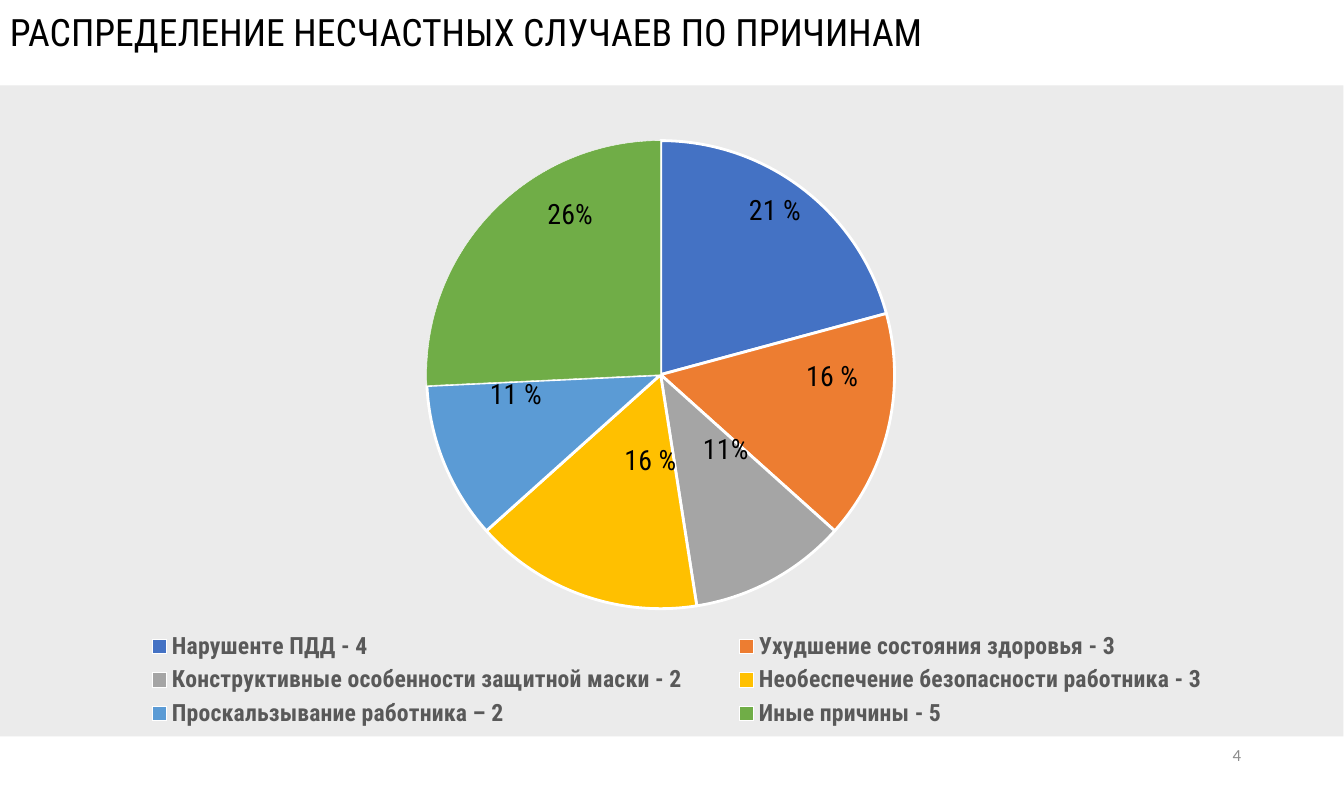
import math

import lxml.etree
import pptx
import pptx.chart.data
import pptx.dml.color
import pptx.enum.chart
import pptx.enum.shapes
import pptx.enum.text
import pptx.util
from pptx.oxml.ns import qn

WIDTH_CM, HEIGHT_CM = 34, 20
HEADING = "РАСПРЕДЕЛЕНИЕ НЕСЧАСТНЫХ СЛУЧАЕВ ПО ПРИЧИНАМ"
PAGE_NUMBER = "4"
HEADING_FONT, PAGE_FONT = "Roboto Condensed", "Calibri"

CAUSES = [
    ("Нарушенте ПДД - 4", 21, "4472C4", "21 %", (7.72, 2.1)),
    ("Ухудшение состояния здоровья - 3", 16, "ED7D31", "16 %", (8.29, 3.75)),
    ("Конструктивные особенности защитной маски - 2", 11, "A5A5A5", "11%", (7.23, 4.48)),
    ("Необеспечение безопасности работника - 3", 16, "FFC000", "16 %", (6.48, 4.59)),
    ("Проскальзывание работника – 2 ", 11, "5B9BD5", "11 %", (5.14, 3.93)),
    ("Иные причины - 5", 26, "70AD47", "26%", (5.68, 2.14)),
]
PANEL_BOX = (0, 0.85, 13.38, 6.48)
CHART_BOX = (0.52, 0.96, 12.2, 6.34)
PIE_CENTRE, PIE_RADIUS = (6.58, 3.73), 2.33
LEGEND_BOX = (1.03, 6.24, 11.43, 1.06)


def inches(box):
    return [pptx.util.Inches(length) for length in box]


def rgb(colour):
    return pptx.dml.color.RGBColor.from_string(colour)


def style(font, size, colour, face, bold=False):
    font.size, font.name, font.bold = pptx.util.Pt(size), face, bold
    font.color.rgb = rgb(colour)


def add_text(slide, box, text, size, colour, face, align, anchor):
    frame = slide.shapes.add_textbox(*inches(box)).text_frame
    frame.word_wrap = True
    frame.vertical_anchor = anchor
    paragraph = frame.paragraphs[0]
    paragraph.alignment = align
    run = paragraph.add_run()
    run.text = text
    style(run.font, size, colour, face)


def set_layout(parent, index, **settings):
    for old in parent.findall(qn("c:layout")):
        parent.remove(old)
    layout = lxml.etree.Element(qn("c:layout"))
    manual = lxml.etree.SubElement(layout, qn("c:manualLayout"))
    for tag, value in settings.items():
        lxml.etree.SubElement(manual, qn("c:" + tag)).set("val", str(value))
    parent.insert(index, layout)


def chart_shares(box):
    left, top, width, height = CHART_BOX
    return dict(
        xMode="edge", yMode="edge",
        x=round((box[0] - left) / width, 4), y=round((box[1] - top) / height, 4),
        w=round(box[2] / width, 4), h=round(box[3] / height, 4),
    )


def add_pie(slide):
    data = pptx.chart.data.CategoryChartData(number_format="0")
    data.categories = [cause[0] for cause in CAUSES]
    data.add_series("Series 1", [cause[1] for cause in CAUSES])
    chart = slide.shapes.add_chart(
        pptx.enum.chart.XL_CHART_TYPE.PIE, *inches(CHART_BOX), data).chart
    chart.has_title = False
    style(chart.font, 10, "000000", PAGE_FONT)
    chart.has_legend = True
    chart.legend.position = pptx.enum.chart.XL_LEGEND_POSITION.BOTTOM
    chart.legend.include_in_layout = False
    style(chart.legend.font, 17, "595959", HEADING_FONT, True)
    plot = chart.plots[0]
    plot.vary_by_categories = True

    total = sum(cause[1] for cause in CAUSES)
    passed = 0
    for index, (_, share, colour, label, target) in enumerate(CAUSES):
        point = plot.series[0].points[index]
        point.format.fill.solid()
        point.format.fill.fore_color.rgb = rgb(colour)
        point.format.line.color.rgb = rgb("FFFFFF")
        point.format.line.width = pptx.util.Pt(2 if index < len(CAUSES) - 1 else 0.25)
        run = point.data_label.text_frame.paragraphs[0].add_run()
        run.text = label
        style(run.font, 20, "000000", HEADING_FONT)
        point.data_label.position = pptx.enum.chart.XL_LABEL_POSITION.CENTER

        angle = 2 * math.pi * (passed + share / 2) / total
        passed += share
        middle_x = PIE_CENTRE[0] + PIE_RADIUS / 2 * math.sin(angle)
        middle_y = PIE_CENTRE[1] - PIE_RADIUS / 2 * math.cos(angle)
        node = next(item for item in chart.element.iter(qn("c:dLbl"))
                    if item.find(qn("c:idx")).get("val") == str(index))
        set_layout(node, 1, x=round((target[0] - middle_x) / CHART_BOX[2], 4),
                   y=round((target[1] - middle_y) / CHART_BOX[3], 4))

    pie_box = (PIE_CENTRE[0] - PIE_RADIUS, PIE_CENTRE[1] - PIE_RADIUS,
               2 * PIE_RADIUS, 2 * PIE_RADIUS)
    set_layout(next(chart.element.iter(qn("c:plotArea"))), 0,
               layoutTarget="inner", **chart_shares(pie_box))
    set_layout(next(chart.element.iter(qn("c:legend"))), 1, **chart_shares(LEGEND_BOX))


def main():
    deck = pptx.Presentation()
    deck.slide_width = pptx.util.Cm(WIDTH_CM)
    deck.slide_height = pptx.util.Cm(HEIGHT_CM)
    slide = deck.slides.add_slide(deck.slide_layouts[6])
    panel = slide.shapes.add_shape(
        pptx.enum.shapes.MSO_SHAPE.RECTANGLE, *inches(PANEL_BOX))
    panel.shadow.inherit = False
    panel.fill.solid()
    panel.fill.fore_color.rgb = rgb("EBEBEB")
    panel.line.fill.background()
    align, anchor = pptx.enum.text.PP_ALIGN, pptx.enum.text.MSO_ANCHOR
    add_text(slide, (0, 0.04, 13.72, 0.56), HEADING, 27, "000000",
             HEADING_FONT, align.LEFT, anchor.TOP)
    add_text(slide, (9.45, 7.3, 3.01, 0.42), PAGE_NUMBER, 12.1, "8C8C8C",
             PAGE_FONT, align.RIGHT, anchor.MIDDLE)
    add_pie(slide)
    deck.save("out.pptx")


if __name__ == "__main__":
    main()
